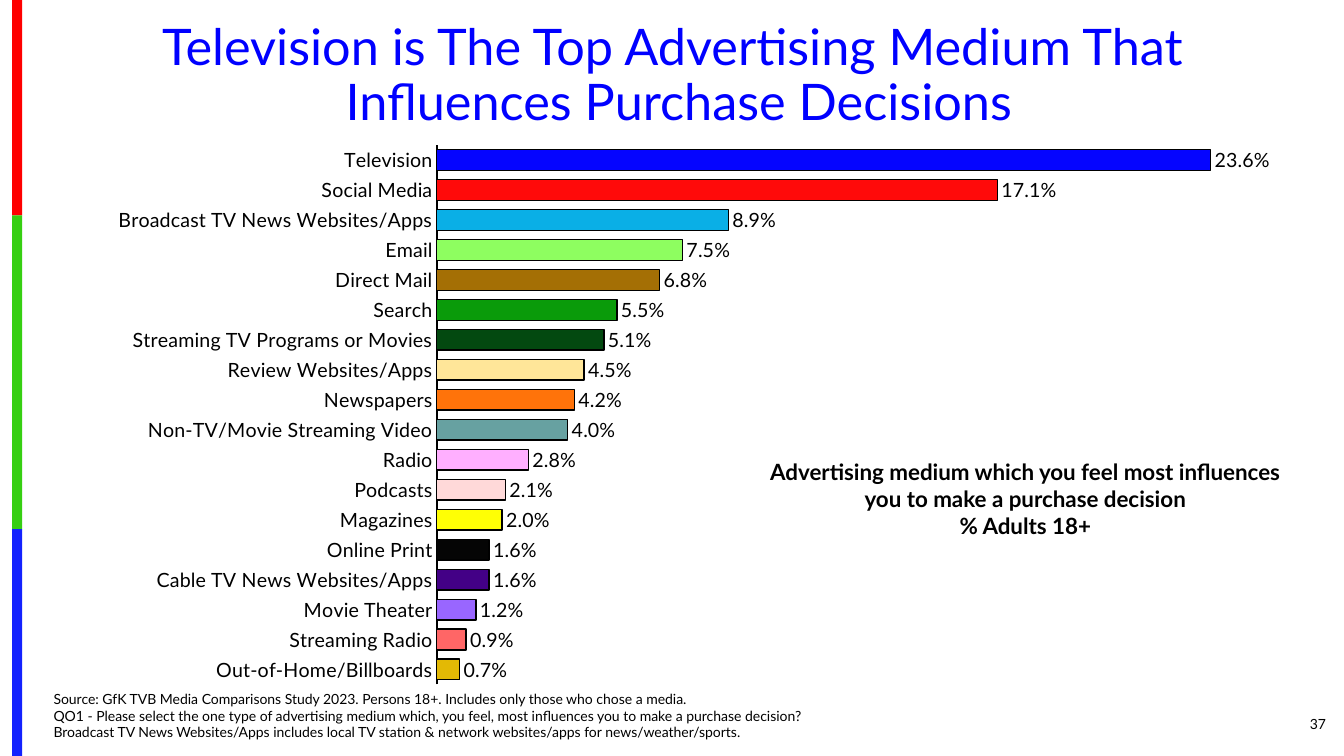
from dataclasses import dataclass

from lxml import etree
from pptx import Presentation
from pptx.chart.data import CategoryChartData
from pptx.dml.color import RGBColor
from pptx.enum.chart import XL_CHART_TYPE, XL_LABEL_POSITION, XL_TICK_MARK
from pptx.enum.shapes import MSO_SHAPE
from pptx.enum.text import MSO_ANCHOR, MSO_AUTO_SIZE, PP_ALIGN
from pptx.oxml import parse_xml
from pptx.oxml.ns import nsdecls, qn
from pptx.util import Inches, Pt

BAR = XL_CHART_TYPE.BAR_CLUSTERED
END = XL_LABEL_POSITION.OUTSIDE_END
NO_TICK = XL_TICK_MARK.NONE
RECT = MSO_SHAPE.RECTANGLE
TOP, MIDDLE, BOTTOM = MSO_ANCHOR.TOP, MSO_ANCHOR.MIDDLE, MSO_ANCHOR.BOTTOM
LEFT, CENTER, RIGHT = PP_ALIGN.LEFT, PP_ALIGN.CENTER, PP_ALIGN.RIGHT
NO_FIT = MSO_AUTO_SIZE.NONE

MEDIA = [
    ("Television", 0.236, "0505FF"),
    ("Social Media", 0.171, "FF0A0A"),
    ("Broadcast TV News Websites/Apps", 0.089, "0AAFE6"),
    ("Email", 0.075, "8EFE60"),
    ("Direct Mail", 0.068, "A46F05"),
    ("Search", 0.055, "0A9B0A"),
    ("Streaming TV Programs or Movies", 0.051, "034910"),
    ("Review Websites/Apps", 0.045, "FFE699"),
    ("Newspapers", 0.042, "FF730A"),
    ("Non-TV/Movie Streaming Video", 0.04, "67A1A1"),
    ("Radio", 0.028, "FFAFFF"),
    ("Podcasts", 0.021, "FFD9D9"),
    ("Magazines", 0.02, "FFFF05"),
    ("Online Print", 0.016, "050505"),
    ("Cable TV News Websites/Apps", 0.016, "430086"),
    ("Movie Theater", 0.012, "9966FF"),
    ("Streaming Radio", 0.009, "FF6666"),
    ("Out-of-Home/Billboards", 0.007, "E3B905"),
]
SOURCE = (
    "Source: GfK TVB Media Comparisons Study 2023. Persons 18+. "
    "Includes only those who chose a media.\v"
    "QO1 - Please select the one type of advertising medium which, you feel, "
    "most influences you to make a purchase decision? "
    "Broadcast TV News Websites/Apps includes local TV station & network "
    "websites/apps for news/weather/sports."
)
NOTE = (
    "Advertising medium which you feel most influences "
    "you to make a purchase decision\n% Adults 18+"
)


@dataclass(frozen=True)
class Theme:
    """Colours, face and type sizes of the slide."""

    face: str = "Lato"
    ink: str = "000000"
    head: str = "0000FF"
    bands: tuple = (("FE0000", 28.5), ("36CF12", 41.5), ("1322FE", 30))
    title: int = 36
    note: int = 16
    label: int = 14
    small: int = 10


def put(item, **values):
    """Set each named value on the item."""
    for name, value in values.items():
        setattr(item, name, value)


class Page:
    """Draws on one slide, in a grid of 100 columns by 100 rows."""

    def __init__(self, deck, theme):
        """Add a slide that has a title and a body."""
        self.theme = theme
        self.slide = deck.slides.add_slide(deck.slide_layouts[1])
        self.col = deck.slide_width / 100
        self.row = deck.slide_height / 100

    def grid(self, left, top, wide, high):
        """Turn columns and rows into lengths."""
        return (round(left * self.col), round(top * self.row),
                round(wide * self.col), round(high * self.row))

    def face(self, font, size, color=None, bold=False):
        """Format a font from the theme."""
        put(font, name=self.theme.face, size=Pt(size), bold=bold)
        font.color.rgb = RGBColor.from_string(color or self.theme.ink)

    def paint(self, fill, color):
        """Give a fill one solid colour."""
        fill.solid()
        fill.fore_color.rgb = RGBColor.from_string(color)

    def band(self, spot, color):
        """Draw a plain block of colour."""
        shape = self.slide.shapes.add_shape(RECT, *self.grid(*spot))
        shape.shadow.inherit = False
        self.paint(shape.fill, color)
        shape.line.fill.background()

    def letter(self, shape, text, size, align, anchor, lead=1.0,
               color=None, bold=False):
        """Fill a shape's frame with formatted text."""
        frame = shape.text_frame
        put(frame, text=text, word_wrap=True, auto_size=NO_FIT,
            vertical_anchor=anchor)
        for para in frame.paragraphs:
            props = para._p.get_or_add_pPr()
            props.set("marL", "0")
            props.set("indent", "0")
            etree.SubElement(props, qn("a:buNone"))
            put(para, alignment=align, line_spacing=lead,
                space_before=Pt(0), space_after=Pt(0))
            for run in para.runs:
                self.face(run.font, size, color, bold)

    def hold(self, index, spot, *args, **style):
        """Move a placeholder and set its text."""
        shape = self.slide.placeholders[index]
        names = ("left", "top", "width", "height")
        put(shape, **dict(zip(names, self.grid(*spot))))
        self.letter(shape, *args, **style)

    def text(self, spot, *args, **style):
        """Add a text box."""
        box = self.slide.shapes.add_textbox(*self.grid(*spot))
        self.letter(box, *args, **style)

    def bars(self, spot, rows, plot):
        """Add a bar chart with one colour for each row."""
        names, values, colors = zip(*rows)
        data = CategoryChartData(number_format="0.0%")
        data.categories = names
        data.add_series("Series 1", values)
        chart = self.slide.shapes.add_chart(BAR, *self.grid(*spot), data).chart
        put(chart, has_legend=False, has_title=False)
        self.face(chart.font, self.theme.small)
        self.axes(chart)
        group = chart.plots[0]
        put(group, gap_width=45, vary_by_categories=False, has_data_labels=True)
        labels = group.data_labels
        put(labels, show_value=True, position=END, number_format="0.0%",
            number_format_is_linked=False)
        self.face(labels.font, self.theme.label)
        for index, color in enumerate(colors):
            style = group.series[0].points[index].format
            self.paint(style.fill, color)
            self.edge(style.line, 1)
        self.frame(chart, plot)

    def edge(self, line, width):
        """Draw a line in ink."""
        self.paint(line.fill, self.theme.ink)
        line.width = Pt(width)

    def axes(self, chart):
        """Show the category axis and hide the value axis."""
        axis = chart.category_axis
        put(axis, reverse_order=True, major_tick_mark=NO_TICK,
            minor_tick_mark=NO_TICK, has_major_gridlines=False)
        self.face(axis.tick_labels.font, self.theme.label)
        self.edge(axis.format.line, 1.5)
        put(chart.value_axis, minimum_scale=0, maximum_scale=0.25,
            has_major_gridlines=False, visible=False)

    def frame(self, chart, plot):
        """Fix the inner plot area by percents of the chart."""
        area = chart._chartSpace.chart.plotArea
        for old in area.findall(qn("c:layout")):
            area.remove(old)
        parts = '<c:layoutTarget val="inner"/>'
        parts += '<c:xMode val="edge"/><c:yMode val="edge"/>'
        parts += "".join(f'<c:{key} val="{share / 100:.3f}"/>'
                         for key, share in zip("xywh", plot))
        area.insert(0, parse_xml(
            f'<c:layout {nsdecls("c")}><c:manualLayout>{parts}'
            "</c:manualLayout></c:layout>"))


def main():
    """Build and save the slide."""
    deck = Presentation()
    put(deck, slide_width=Inches(13.33), slide_height=Inches(7.5))
    theme = Theme()
    page = Page(deck, theme)
    top = 0
    for color, high in theme.bands:
        page.band((0.9, top, 0.75, high), color)
        top += high
    page.hold(0, (3.45, 2.27, 93.17, 15.87),
              "Television is The Top Advertising Medium That\v"
              " Influences Purchase Decisions",
              theme.title, CENTER, TOP, lead=0.9, color=theme.head)
    page.text((91.3, 93.07, 8.1, 5.33), "37", theme.small, RIGHT, MIDDLE)
    page.hold(1, (3.23, 90.53, 61.29, 8.13), SOURCE, theme.small, LEFT, BOTTOM)
    page.text((55.96, 60, 40.66, 12.13), NOTE, theme.note, CENTER, TOP, bold=True)
    page.bars((3.45, 17.2, 91.6, 73.87), MEDIA, (31.7, 2.7, 66.6, 96.6))
    deck.save("out.pptx")


if __name__ == "__main__":
    main()
